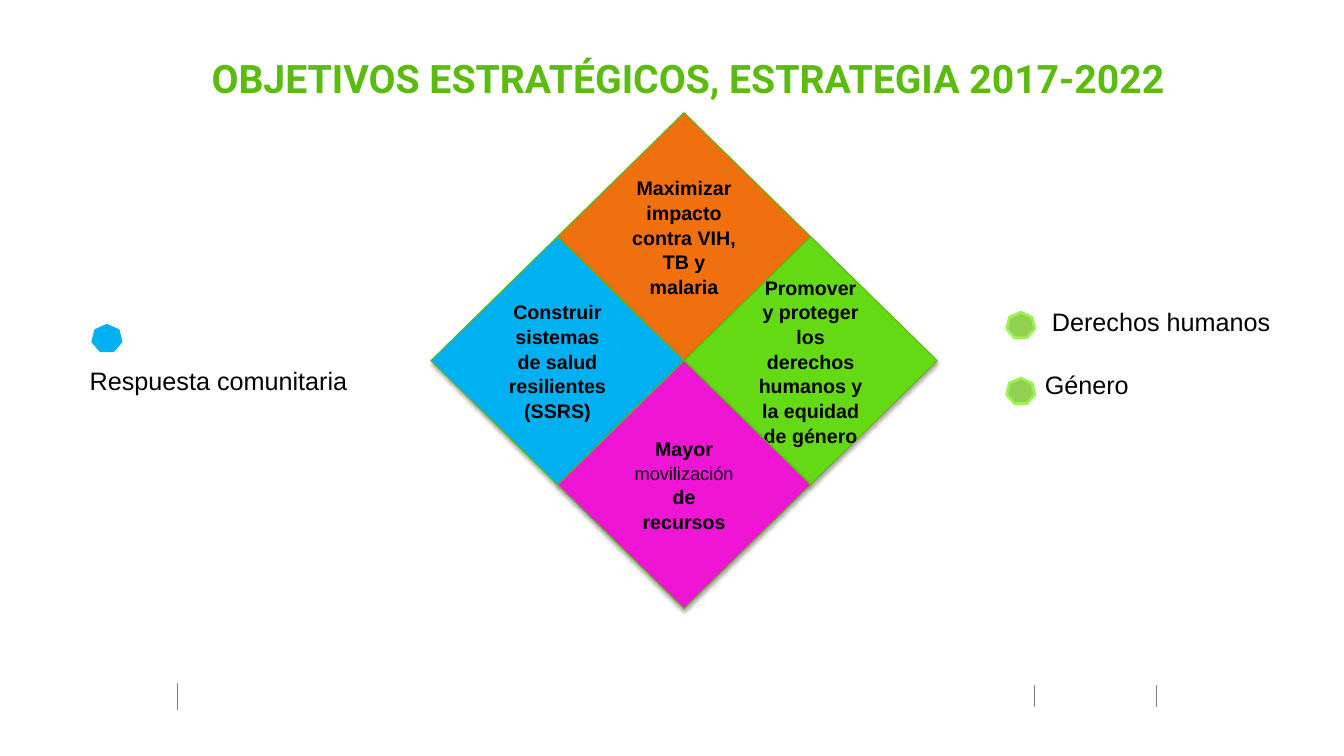
from lxml.etree import SubElement
from pptx import Presentation
from pptx.dml.color import RGBColor
from pptx.enum.shapes import MSO_CONNECTOR, MSO_SHAPE
from pptx.enum.text import MSO_ANCHOR, PP_ALIGN
from pptx.oxml import parse_xml
from pptx.oxml.ns import nsdecls, qn
from pptx.util import Cm, Pt

BLACK = RGBColor(0x00, 0x00, 0x00)
GREY = RGBColor(0x80, 0x80, 0x80)
TITLE_GREEN = RGBColor(0x5B, 0xBB, 0x0E)
EDGE_GREEN = RGBColor(0x59, 0xBB, 0x09)
ORANGE = RGBColor(0xF0, 0x70, 0x10)
GREEN = RGBColor(0x64, 0xDA, 0x15)
BLUE = RGBColor(0x00, 0xB0, 0xF0)
MAGENTA = RGBColor(0xEF, 0x15, 0xD5)
MARKER_GREEN = RGBColor(0x92, 0xD0, 0x50)
MARKER_EDGE = RGBColor(0x9A, 0xF2, 0x53)

SHADOW = (
    f'<a:effectLst {nsdecls("a")}>'
    '<a:outerShdw blurRad="39370" dist="22860" dir="5400000" rotWithShape="0">'
    '<a:srgbClr val="000000"><a:alpha val="35000"/></a:srgbClr>'
    '</a:outerShdw></a:effectLst>'
)


def add_span(para, text, size, bold=False, color=BLACK, font="Arial"):
    span = para.add_run()
    span.text = text
    span.font.name = font
    span.font.size = Pt(size)
    span.font.bold = bold
    span.font.color.rgb = color


def add_label(page, left, top, width, height):
    box = page.shapes.add_textbox(Cm(left), Cm(top), Cm(width), Cm(height))
    box.text_frame.word_wrap = True
    return box.text_frame


deck = Presentation()
deck.slide_width = Cm(33.87)
deck.slide_height = Cm(19.05)
page = deck.slides.add_slide(deck.slide_layouts[6])

for x, top, bottom in [(4.47, 17.22, 17.88), (29.13, 17.25, 17.81), (26.06, 17.25, 17.81)]:
    divider = page.shapes.add_connector(
        MSO_CONNECTOR.STRAIGHT, Cm(x), Cm(top), Cm(x), Cm(bottom))
    divider.line.color.rgb = GREY
    divider.line.width = Pt(0.25)
    SubElement(divider._element.spPr, qn("a:effectLst"))

center_x, center_y = 17.24, 9.09
diamond_width, diamond_height = 6.38, 6.25
objectives = [
    (0, -1, ORANGE, [[("Maximizar impacto contra VIH, TB y malaria", 14, True)]]),
    (1, 0, GREEN, [[("Promover y proteger los derechos humanos y la equidad de género", 14, True)]]),
    (-1, 0, BLUE, [[("Construir sistemas de salud resilientes", 14, True)], [("(SSRS)", 14, True)]]),
    (0, 1, MAGENTA, [[("Mayor ", 14, True), ("movilización ", 13, False), ("de recursos", 14, True)]]),
]
for column, row, color, paragraphs in objectives:
    diamond = page.shapes.add_shape(
        MSO_SHAPE.DIAMOND,
        Cm(center_x + (column - 1) * diamond_width / 2),
        Cm(center_y + (row - 1) * diamond_height / 2),
        Cm(diamond_width), Cm(diamond_height))
    diamond.fill.solid()
    diamond.fill.fore_color.rgb = color
    diamond.line.color.rgb = EDGE_GREEN
    diamond.line.width = Pt(0.75)
    diamond._element.spPr.append(parse_xml(SHADOW))
    frame = diamond.text_frame
    frame.word_wrap = True
    frame.vertical_anchor = MSO_ANCHOR.MIDDLE
    for number, spans in enumerate(paragraphs):
        para = frame.add_paragraph() if number else frame.paragraphs[0]
        para.alignment = PP_ALIGN.CENTER
        para.line_spacing = 1.05
        for text, size, bold in spans:
            add_span(para, text, size, bold)

community = add_label(page, 2.01, 9.09, 8.89, 1.02)
add_span(community.paragraphs[0], "Respuesta comunitaria", 18)

rights = add_label(page, 25.55, 7.59, 8.1, 2.64)
for number, (text, indent) in enumerate([("Derechos humanos", 0.71), ("Género", 0.53)]):
    para = rights.add_paragraph() if number else rights.paragraphs[0]
    para._p.get_or_add_pPr().set("marL", str(Cm(indent)))
    if number:
        para.space_before = Pt(23.5)
    add_span(para, text, 18)

markers = [
    (2.34, 8.2, BLUE, BLUE),
    (25.37, 9.53, MARKER_GREEN, MARKER_EDGE),
    (25.37, 7.87, MARKER_GREEN, MARKER_EDGE),
]
for left, top, color, edge in markers:
    marker = page.shapes.add_shape(MSO_SHAPE.HEPTAGON, Cm(left), Cm(top), Cm(0.71), Cm(0.64))
    marker.shadow.inherit = False
    marker.fill.solid()
    marker.fill.fore_color.rgb = color
    marker.line.color.rgb = edge
    marker.line.width = Pt(2)

title = add_label(page, 3.63, 1.24, 27.41, 1.45)
title.paragraphs[0].alignment = PP_ALIGN.CENTER
add_span(title.paragraphs[0], "OBJETIVOS ESTRATÉGICOS, ESTRATEGIA 2017-2022", 28, True, TITLE_GREEN, "Roboto")

deck.save("out.pptx")
